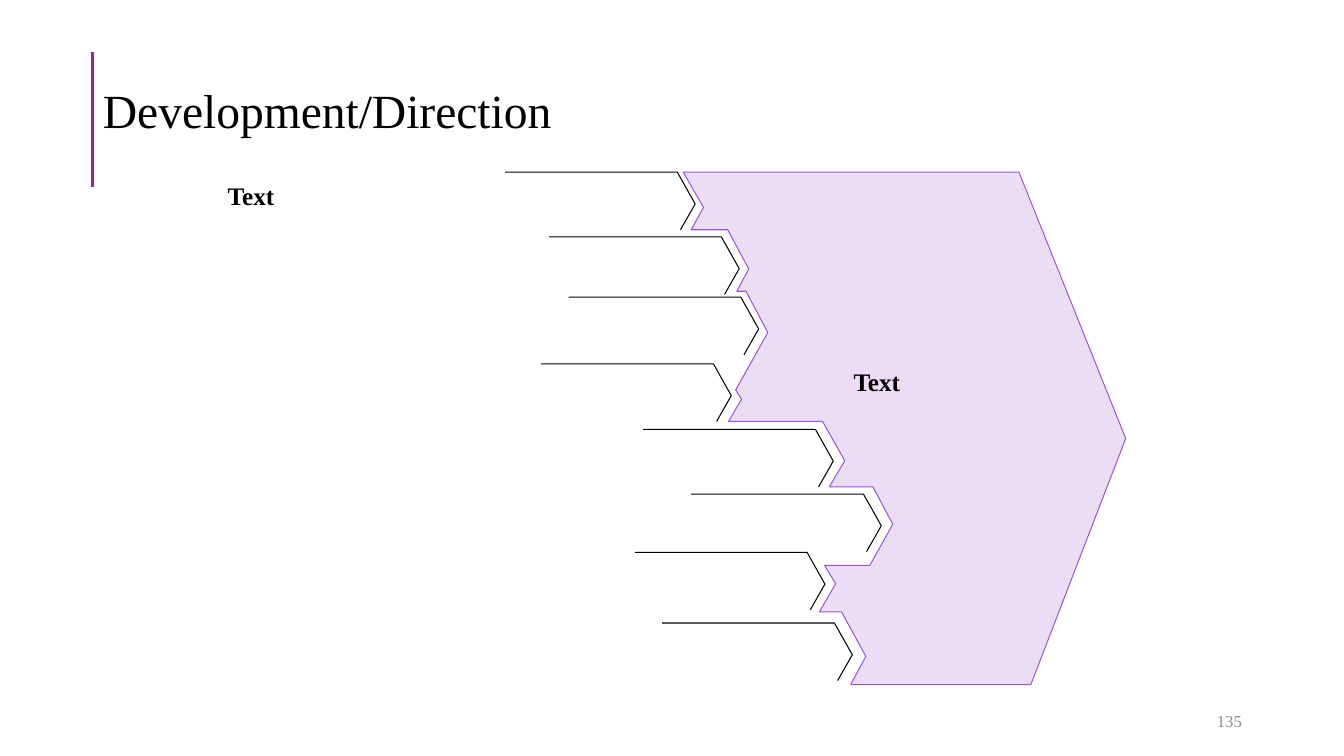
import pptx
import pptx.dml.color
import pptx.enum.shapes
import pptx.enum.text
import pptx.oxml.ns
import pptx.util
from lxml import etree

Cm = pptx.util.Cm
Pt = pptx.util.Pt
RGBColor = pptx.dml.color.RGBColor
ALIGN = pptx.enum.text.PP_ALIGN
ANCHOR = pptx.enum.text.MSO_ANCHOR

BLACK = RGBColor(0x00, 0x00, 0x00)
GREY = RGBColor(0x8C, 0x8C, 0x8C)
PLUM = RGBColor(0x92, 0x27, 0x8F)
VIOLET = RGBColor(0x9B, 0x57, 0xD3)
LILAC = RGBColor(0xEB, 0xDD, 0xF6)

STEP_OUTLINE = [(0, 0), (4.34, 0), (4.79, 0.8), (4.42, 1.45)]
STEP_STARTS = [
    (12.73, 4.34), (13.84, 5.97), (14.33, 7.49), (13.64, 9.17),
    (16.21, 10.82), (17.42, 12.45), (16, 13.92), (16.69, 15.7),
]
DIRECTION_OUTLINE = [
    (17.22, 4.34), (17.73, 5.23), (17.42, 5.79), (18.34, 5.79),
    (18.87, 6.78), (18.57, 7.34), (18.8, 7.34), (19.35, 8.38),
    (18.54, 9.83), (18.69, 10.06), (18.36, 10.62), (20.73, 10.62),
    (21.29, 11.61), (20.9, 12.27), (22, 12.27), (22.5, 13.21),
    (21.92, 14.25), (20.78, 14.25), (21.06, 14.71), (20.65, 15.42),
    (21.21, 15.42), (21.82, 16.54), (21.44, 17.25), (25.98, 17.25),
    (28.37, 11.05), (25.68, 4.34),
]


class DirectionSlide:
    font = "Times New Roman"
    thin = Pt(0.75)

    def __init__(self, deck):
        self.slide = deck.slides.add_slide(deck.slide_layouts[5])
        self.shapes = self.slide.shapes

    def set_text(self, frame, words, size, color=BLACK, bold=False,
                 align=ALIGN.LEFT, anchor=ANCHOR.MIDDLE, inset=None):
        frame_format = {"word_wrap": True, "vertical_anchor": anchor,
                        "auto_size": pptx.enum.text.MSO_AUTO_SIZE.NONE}
        if inset is not None:
            for side in ("left", "right", "top", "bottom"):
                frame_format["margin_" + side] = inset
        for name, value in frame_format.items():
            setattr(frame, name, value)
        paragraph = frame.paragraphs[0]
        paragraph.alignment = align
        run = paragraph.add_run()
        run.text = words
        for name, value in {"name": self.font, "size": Pt(size), "bold": bold}.items():
            setattr(run.font, name, value)
        run.font.color.rgb = color
        return paragraph

    def title(self, words, left, top, width, height):
        heading = self.shapes.title
        place = {"left": left, "top": top, "width": width, "height": height}
        for name, value in place.items():
            setattr(heading, name, Cm(value))
        self.set_text(heading.text_frame, words, 34).line_spacing = 0.9

    def rule(self, x, top, bottom):
        bar = self.shapes.add_connector(
            pptx.enum.shapes.MSO_CONNECTOR.STRAIGHT, Cm(x), Cm(top), Cm(x), Cm(bottom))
        bar.line.color.rgb = PLUM
        bar.line.width = Pt(2.25)
        etree.SubElement(bar._element.spPr, pptx.oxml.ns.qn("a:effectLst"))

    def label(self, words, left, top, width, height, size, **style):
        box = self.shapes.add_textbox(Cm(left), Cm(top), Cm(width), Cm(height))
        self.set_text(box.text_frame, words, size, **style)

    def outline(self, points, line, fill=None):
        grid = [(round(x * 100), round(y * 100)) for x, y in points]
        builder = self.shapes.build_freeform(*grid[0], scale=Cm(0.01))
        builder.add_line_segments(grid[1:], close=fill is not None)
        form = builder.convert_to_shape()
        form.shadow.inherit = False
        form.line.color.rgb = line
        form.line.width = self.thin
        if fill is None:
            form.fill.background()
        else:
            form.fill.solid()
            form.fill.fore_color.rgb = fill


def main():
    deck = pptx.Presentation()
    deck.slide_width = Cm(33.87)
    deck.slide_height = Cm(19.05)
    page = DirectionSlide(deck)
    caption = {"size": 18, "bold": True, "anchor": ANCHOR.TOP, "inset": 0}

    page.rule(2.34, 1.32, 4.7)
    page.title("Development/Direction", 2.34, 1.02, 29.21, 3.68)
    for left, top in STEP_STARTS:
        page.outline([(left + x, top + y) for x, y in STEP_OUTLINE], BLACK)
    page.label("Text", 5.74, 4.55, 7.54, 0.76, **caption)
    page.outline(DIRECTION_OUTLINE, VIOLET, LILAC)
    page.label("Text", 21.51, 9.22, 3.91, 0.76, **caption)
    page.label("135", 23.93, 17.65, 7.62, 1.02, 12, color=GREY, align=ALIGN.RIGHT)

    deck.save("out.pptx")


if __name__ == "__main__":
    main()
